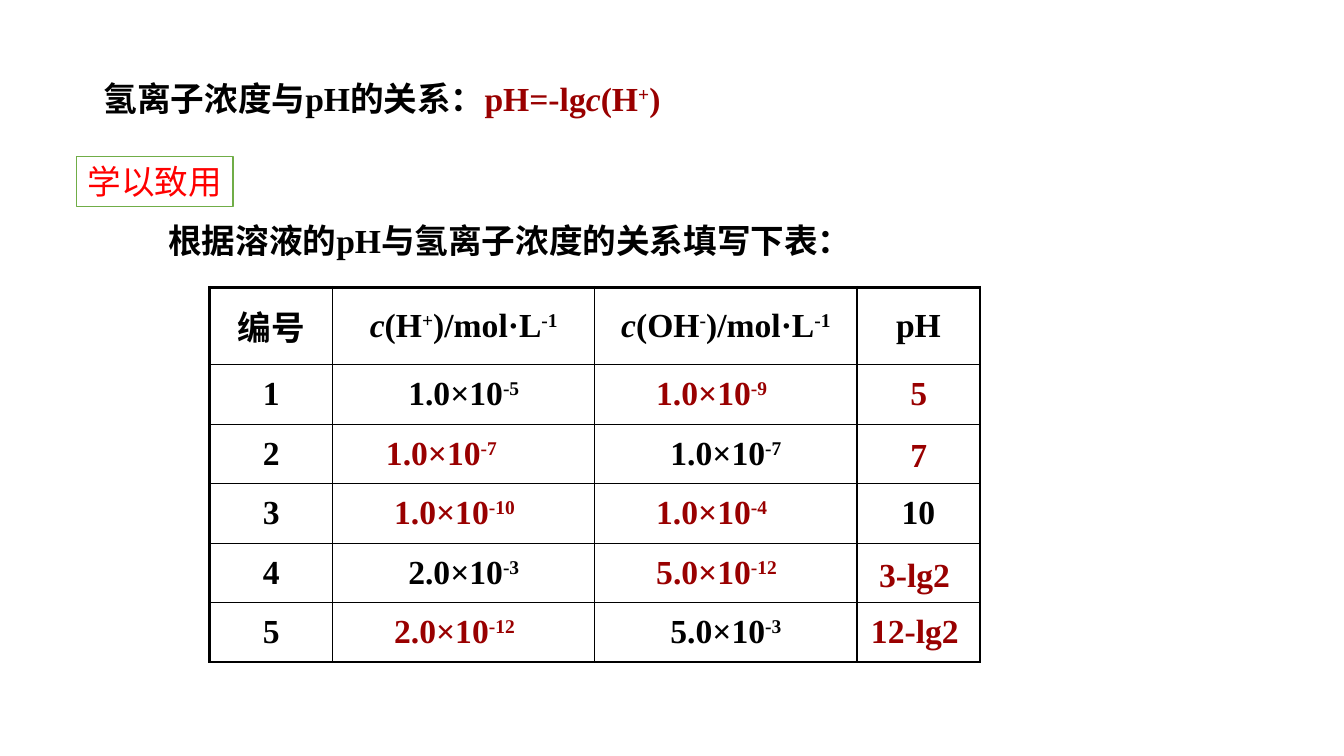
from dataclasses import dataclass
from itertools import accumulate

from lxml import etree
from pptx import Presentation
from pptx.dml.color import RGBColor
from pptx.enum.shapes import MSO_SHAPE
from pptx.enum.text import MSO_ANCHOR, PP_ALIGN
from pptx.oxml.ns import qn
from pptx.util import Inches, Pt

RECT = MSO_SHAPE.RECTANGLE
MIDDLE = MSO_ANCHOR.MIDDLE
CENTER = PP_ALIGN.CENTER


@dataclass(frozen=True)
class Theme:
    """Colours, fonts and sizes of the slide."""
    ink: str = "000000"
    answer: str = "990000"
    label: str = "FF0000"
    frame: str = "70AD47"
    paper: str = "FFFFFF"
    latin: str = "Times New Roman"
    hanzi: str = "Noto Sans CJK SC"
    size: float = 24
    thin: float = 1
    thick: float = 2.25


THEME = Theme()
LINE = 0.5
COLS = [1.22, 2.6, 2.6, 1.22]
ROWS = [0.77] + [0.59] * 5
GRID = [
    ["编号", "~c|(H|^+|)/mol·L|^-1", "~c|(OH|^-|)/mol·L|^-1", "pH"],
    ["1", "1.0×10|^-5", "", ""],
    ["2", "", "1.0×10|^-7", ""],
    ["3", "", "", "10"],
    ["4", "2.0×10|^-3", "", ""],
    ["5", "", "5.0×10|^-3", ""],
]
ANSWERS = [
    (1, 2, 0.51, 0.02, 1.4, "1.0×10|^-9"),
    (1, 3, 0.43, 0.02, 0.37, "5"),
    (2, 1, 0.43, 0.03, 1.4, "1.0×10|^-7"),
    (2, 3, 0.43, 0.05, 0.37, "7"),
    (3, 1, 0.51, 0.02, 1.51, "1.0×10|^-10"),
    (3, 2, 0.51, 0.02, 1.4, "1.0×10|^-4"),
    (4, 2, 0.51, 0.03, 1.51, "5.0×10|^-12"),
    (4, 3, 0.12, 0.06, 0.91, "3-lg2"),
    (5, 1, 0.51, 0.02, 1.51, "2.0×10|^-12"),
    (5, 3, 0.04, 0.02, 1.08, "12-lg2"),
]


def style(para, color, bold=True, latin=THEME.latin):
    """Set the common font of a paragraph."""
    font = para.font
    font.size, font.bold, font.name = Pt(THEME.size), bold, latin
    font.color.rgb = RGBColor.from_string(color)
    props = para._p.pPr.find(qn("a:defRPr"))
    etree.SubElement(props, qn("a:ea")).set("typeface", THEME.hanzi)


def write(para, text, color=None):
    """Add runs split at bars, with ~ for italic and ^ for superscript."""
    for part in text.split("|"):
        run = para.add_run()
        run.text = part.lstrip("~^")
        if part.startswith("~"):
            run.font.italic = True
        if part.startswith("^"):
            run.font._element.set("baseline", "30000")
        if color:
            run.font.color.rgb = RGBColor.from_string(color)


def note(slide, box, text, color=THEME.ink, wrap=True):
    """Place one line of bold text and return its paragraph."""
    frame = slide.shapes.add_textbox(*map(Inches, box)).text_frame
    frame.word_wrap = wrap
    para = frame.paragraphs[0]
    style(para, color)
    write(para, text)
    return para


def badge(slide, box, text):
    """Draw the framed section label."""
    shape = slide.shapes.add_shape(RECT, *map(Inches, box))
    shape.shadow.inherit = False
    shape.fill.solid()
    shape.fill.fore_color.rgb = RGBColor.from_string(THEME.paper)
    shape.line.color.rgb = RGBColor.from_string(THEME.frame)
    shape.line.width = Pt(THEME.thin)
    shape.text_frame.word_wrap = False
    para = shape.text_frame.paragraphs[0]
    para.alignment = CENTER
    style(para, THEME.label, False, THEME.hanzi)
    write(para, text)


def border(cell, row, col):
    """Rule a cell, with thick lines on the outer edges."""
    props = cell._tc.get_or_add_tcPr()
    edges = {"L": col == 0, "R": col == len(COLS) - 1,
             "T": row == 0, "B": row == len(ROWS) - 1}
    for spot, (side, outer) in enumerate(edges.items()):
        line = etree.Element(qn(f"a:ln{side}"))
        line.set("w", str(Pt(THEME.thick if outer else THEME.thin)))
        fill = etree.SubElement(line, qn("a:solidFill"))
        etree.SubElement(fill, qn("a:srgbClr")).set("val", THEME.ink)
        props.insert(spot, line)


def chart(slide, left, top):
    """Build the exercise table and lay the answers over it."""
    box = map(Inches, (left, top, sum(COLS), sum(ROWS)))
    table = slide.shapes.add_table(len(ROWS), len(COLS), *box).table
    table.first_row = table.horz_banding = False
    for col, width in enumerate(COLS):
        table.columns[col].width = Inches(width)
    for row, height in enumerate(ROWS):
        table.rows[row].height = Inches(height)
        for col, text in enumerate(GRID[row]):
            cell = table.cell(row, col)
            cell.fill.background()
            border(cell, row, col)
            cell.vertical_anchor = MIDDLE
            para = cell.text_frame.paragraphs[0]
            para.alignment = CENTER
            para.space_before = Pt(0.2 * THEME.size)
            style(para, THEME.ink)
            if text:
                write(para, text)
    lefts = list(accumulate(COLS, initial=left))
    tops = list(accumulate(ROWS, initial=top))
    for row, col, right, down, width, text in ANSWERS:
        place = (lefts[col] + right, tops[row] + down, width, LINE)
        note(slide, place, text, THEME.answer, False)


def main():
    """Build and save the slide."""
    deck = Presentation()
    deck.slide_width, deck.slide_height = Inches(13.33), Inches(7.5)
    slide = deck.slides.add_slide(deck.slide_layouts[6])
    title = note(slide, (0.93, 0.72, 6, LINE), "氢离子浓度与pH的关系：")
    write(title, "pH=-lg|~c|(H|^+|)", THEME.answer)
    badge(slide, (0.76, 1.55, 1.55, LINE), "学以致用")
    note(slide, (1.57, 2.13, 7.19, LINE), "根据溶液的pH与氢离子浓度的关系填写下表：")
    chart(slide, 2.08, 2.85)
    deck.save("out.pptx")


if __name__ == "__main__":
    main()
